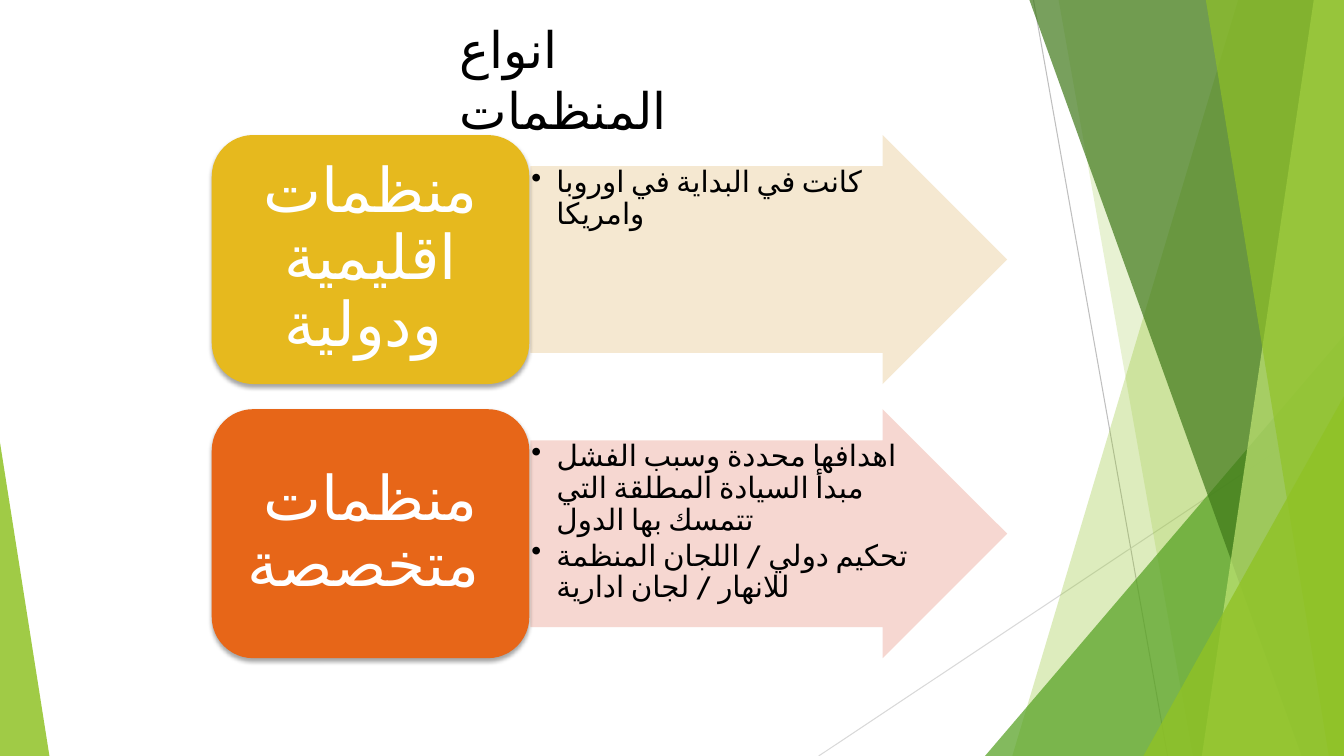
from lxml import etree
from pptx import Presentation
from pptx.dml.color import RGBColor
from pptx.enum.lang import MSO_LANGUAGE_ID
from pptx.enum.shapes import MSO_CONNECTOR, MSO_SHAPE
from pptx.enum.text import MSO_ANCHOR, MSO_AUTO_SIZE, PP_ALIGN
from pptx.oxml.ns import qn
from pptx.util import Inches, Pt

ARABIC = MSO_LANGUAGE_ID.ARABIC
LINE = MSO_CONNECTOR.STRAIGHT
TRI, ARROW, CARD = MSO_SHAPE.ISOSCELES_TRIANGLE, MSO_SHAPE.RIGHT_ARROW, MSO_SHAPE.ROUNDED_RECTANGLE
TOP, MIDDLE = MSO_ANCHOR.TOP, MSO_ANCHOR.MIDDLE
LEFT, CENTER = PP_ALIGN.LEFT, PP_ALIGN.CENTER
NO_FIT = MSO_AUTO_SIZE.NONE
WIDE, HIGH = 13.33, 7.5

# Top x, bottom x, colour, opacity: each band runs to the right edge
BACK = [(12.28, 10.04, "90C226", 30), (10.5, 11.83, "90C226", 20)]
FRONT = [(10.21, 12.91, "3F7819", 70), (13.03, 11.92, "C0E474", 70),
         (11.96, 13.18, "90C226", 65)]

# Card text, card colour, arrow colour, arrow points
ROWS = [
    ("منظمات اقليمية ودولية ", "E6B91E", "F5E6CD",
     ["كانت في البداية في اوروبا وامريكا"]),
    ("منظمات متخصصة ", "E76618", "F6D3CC",
     ["اهدافها محددة وسبب الفشل مبدأ السيادة المطلقة التي تتمسك بها الدول",
      "تحكيم دولي / اللجان المنظمة للانهار / لجان ادارية"]),
]


def color(code):
    return RGBColor.from_string(code)


def add(parent, tag, **attrs):
    node = etree.SubElement(parent, qn(tag))
    for key, value in attrs.items():
        node.set(key, str(value))
    return node


def paint(shape, code, alpha=100):
    shape.shadow.inherit = False
    shape.line.fill.background()
    shape.fill.solid()
    shape.fill.fore_color.rgb = color(code)
    if alpha < 100:
        tone = shape.fill._xPr.find(qn("a:solidFill"))[0]
        add(tone, "a:alpha", val=alpha * 1000)


def block(slide, kind, box, code, alpha=100, adj=()):
    shape = slide.shapes.add_shape(kind, *map(Inches, box))
    for i, value in enumerate(adj):
        shape.adjustments[i] = value
    paint(shape, code, alpha)
    return shape


def band(slide, top, foot, code, alpha):
    form = slide.shapes.build_freeform(Inches(top), 0)
    points = [(WIDE, 0), (WIDE, HIGH), (foot, HIGH)]
    form.add_line_segments([(Inches(x), Inches(y)) for x, y in points])
    paint(form.convert_to_shape(), code, alpha)


def line(slide, ends, code):
    link = slide.shapes.add_connector(LINE, *map(Inches, ends))
    link.line.color.rgb = color(code)
    link.line.width = Pt(0.75)
    add(link._element.spPr, "a:effectLst")


def write(shape, texts, font="Cabin", size=21, code="000000", align=LEFT,
          anchor=TOP, pad=(0.01, 0.01), space=None, after=0, bullet=False):
    frame = shape.text_frame
    frame.word_wrap = True
    frame.auto_size = NO_FIT
    frame.vertical_anchor = anchor
    frame.margin_left = frame.margin_right = Inches(pad[0])
    frame.margin_top = frame.margin_bottom = Inches(pad[1])
    for i, text in enumerate(texts):
        para = frame.add_paragraph() if i else frame.paragraphs[0]
        para.alignment = align
        para.line_spacing = space
        para.space_after = Pt(after)
        run = para.add_run()
        run.text = text
        run.font.name = font
        run.font.size = Pt(size)
        run.font.color.rgb = color(code)
        # Arabic letters take the complex-script font and language
        run.font.language_id = ARABIC
        add(run.font._element, "a:cs", typeface=font)
        props = para._p.get_or_add_pPr()
        if bullet:
            props.set("marL", str(Inches(0.25)))
            props.set("indent", str(Inches(-0.25)))
            add(props, "a:buChar", char="•")


def shade(shape):
    effects = shape._element.spPr.find(qn("a:effectLst"))
    cast = add(effects, "a:outerShdw", blurRad=Pt(3), dist=Pt(2),
               dir=90 * 60000, rotWithShape=0)
    tone = add(cast, "a:srgbClr", val="000000")
    add(tone, "a:alpha", val=35000)


def decor(slide):
    line(slide, (10.25, 0, 11.58, HIGH), "BFBFBF")
    line(slide, (WIDE, 4.03, 8.12, HIGH), "D9D9D9")
    for item in BACK:
        band(slide, *item)
    block(slide, TRI, (9.77, 3.33, 3.56, 4.17), "54A021", 72, [1])
    for item in FRONT:
        band(slide, *item)
    block(slide, TRI, (11.34, 3.93, 1.99, 3.57), "90C226", 80, [1])
    block(slide, TRI, (0, 4.39, 0.49, 3.11), "90C226", 85, [0])


def row(slide, top, label, tint, pale, points):
    arrow = block(slide, ARROW, (5.26, top, 4.73, 2.47), pale, 90, [0.75, 0.5])
    write(arrow, points, space=0.9, after=3, bullet=True)
    card = block(slide, CARD, (2.1, top, 3.15, 2.47), tint)
    shade(card)
    write(card, [label], size=44, code="FFFFFF", align=CENTER, anchor=MIDDLE,
          pad=(0.18, 0.09), space=0.9)


def main():
    deck = Presentation()
    deck.slide_width, deck.slide_height = Inches(WIDE), Inches(HIGH)
    slide = deck.slides.add_slide(deck.slide_layouts[5])

    # Title
    title = slide.shapes.title
    title.left, title.top = Inches(4.46), Inches(0.13)
    title.width, title.height = Inches(2.75), Inches(0.83)
    write(title, ["انواع المنظمات"], font="Arial", size=36, pad=(0.1, 0.05))

    # Side bands, then the two rows
    decor(slide)
    for i, item in enumerate(ROWS):
        row(slide, 1.34 + i * 2.72, *item)
    deck.save("out.pptx")


if __name__ == "__main__":
    main()
